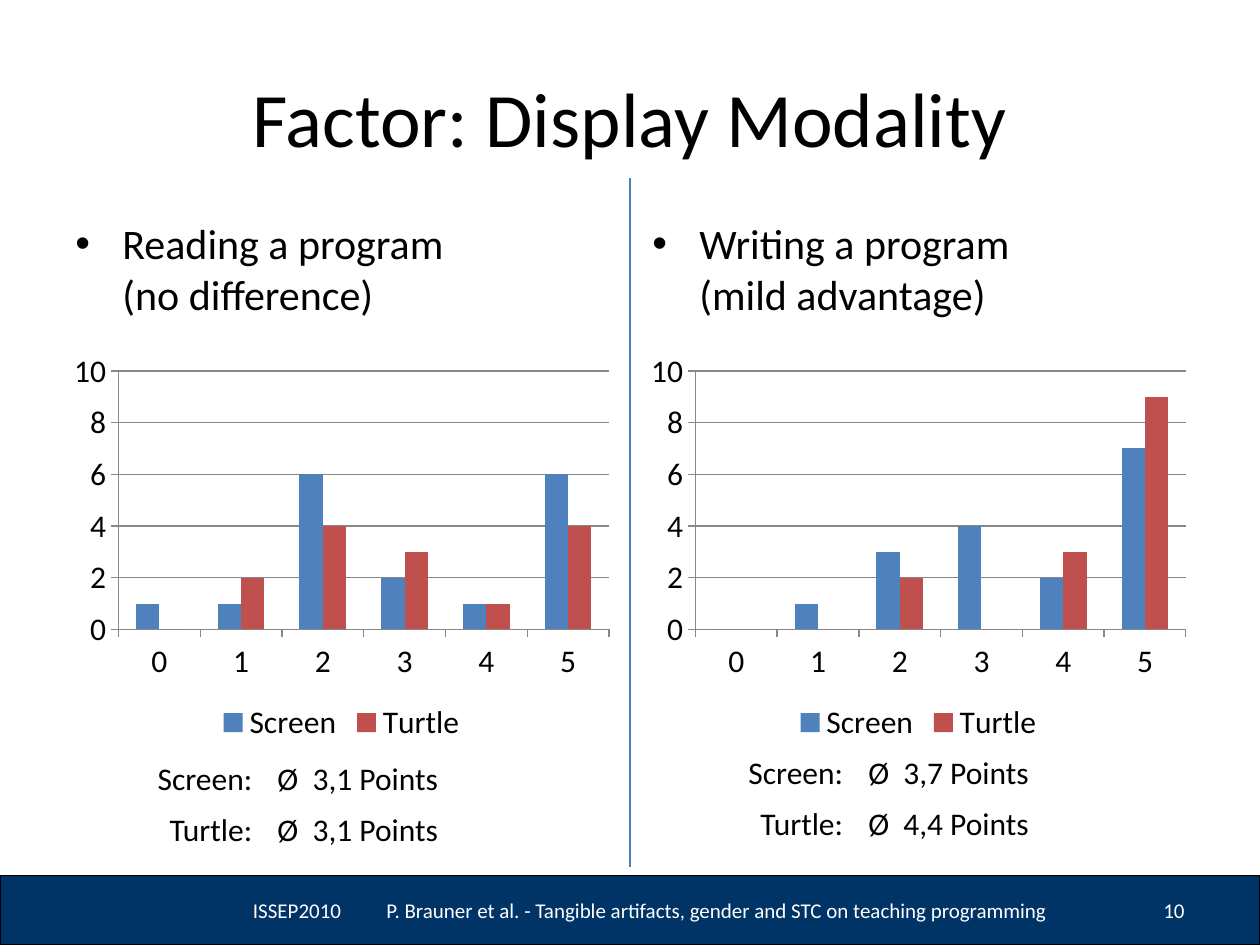
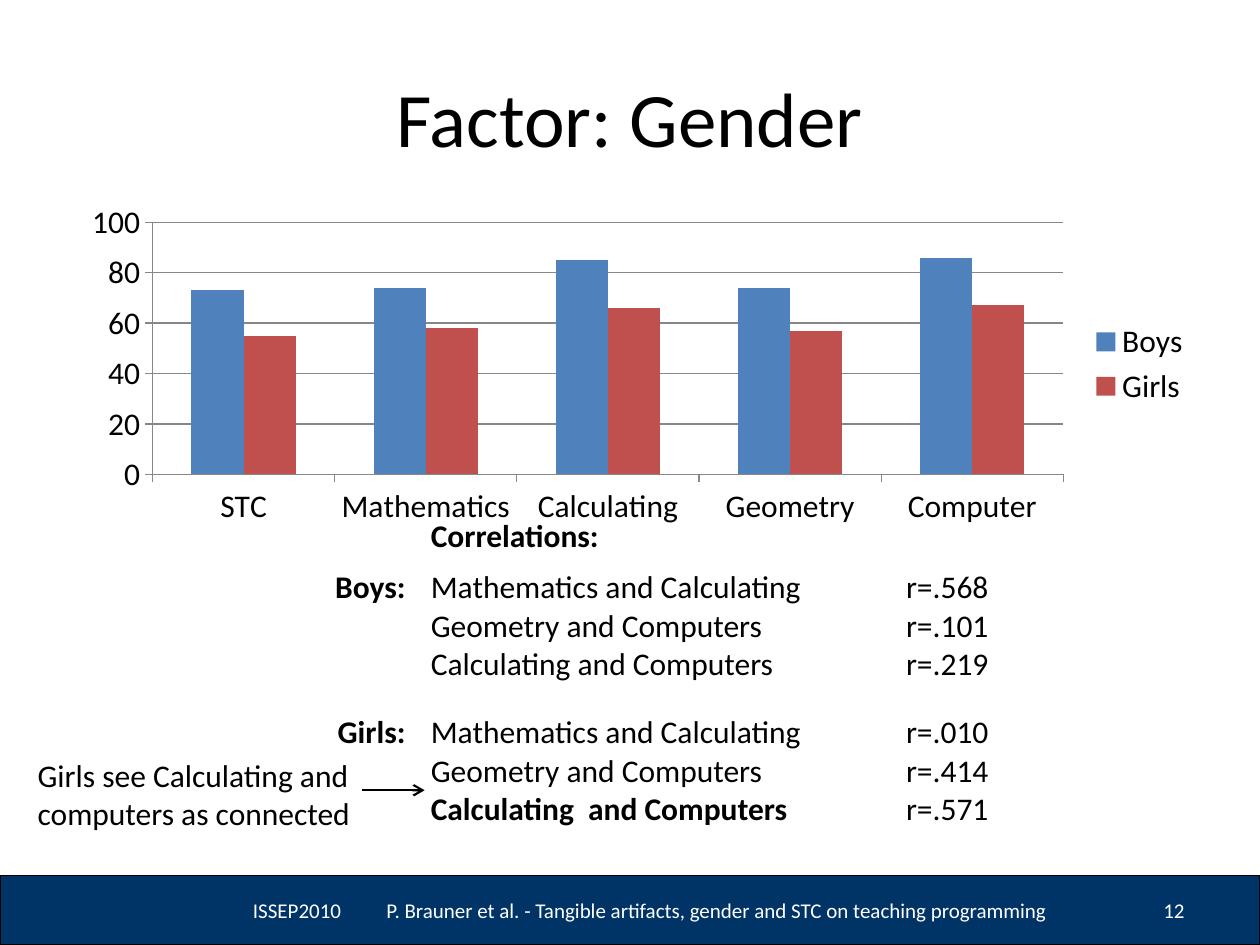
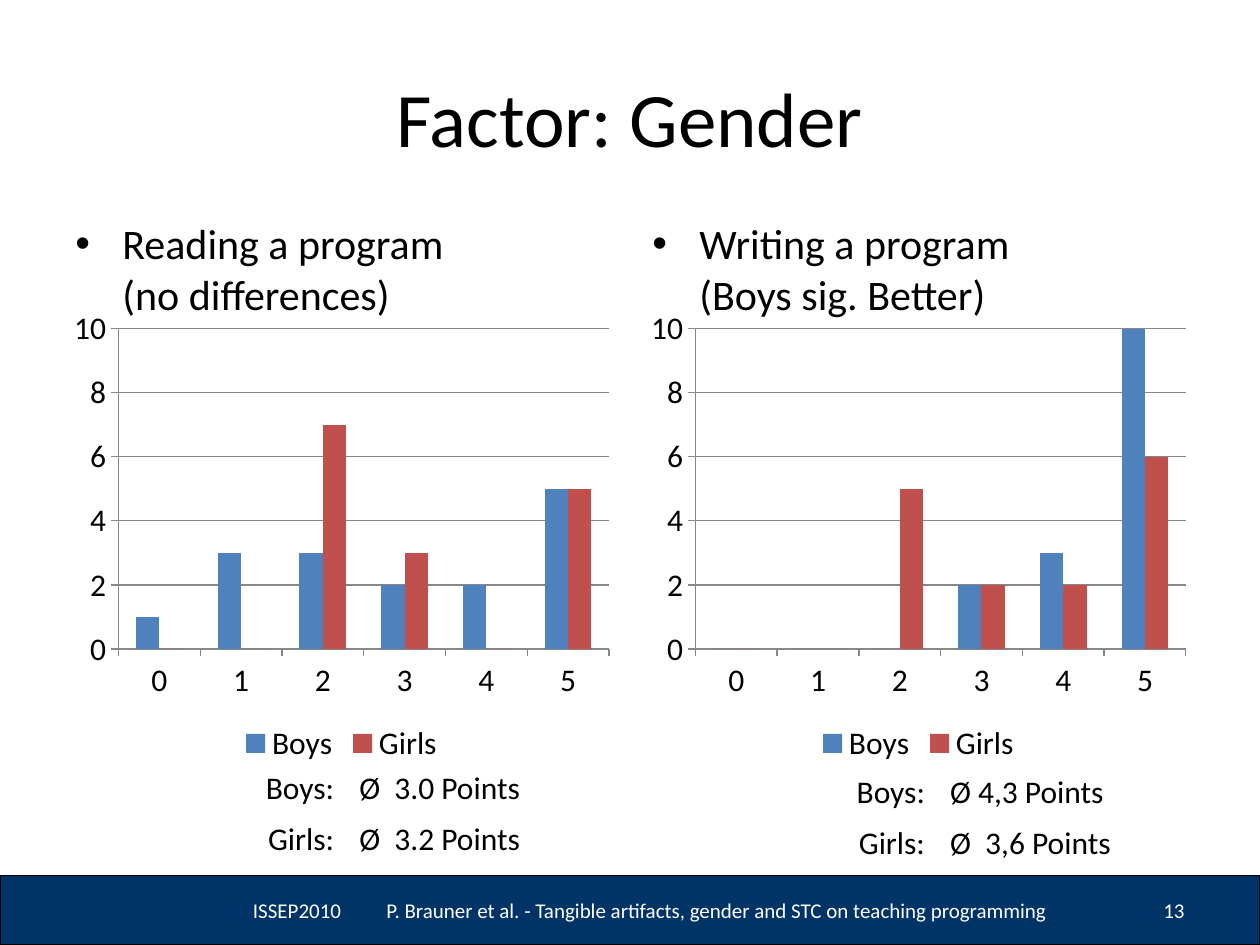
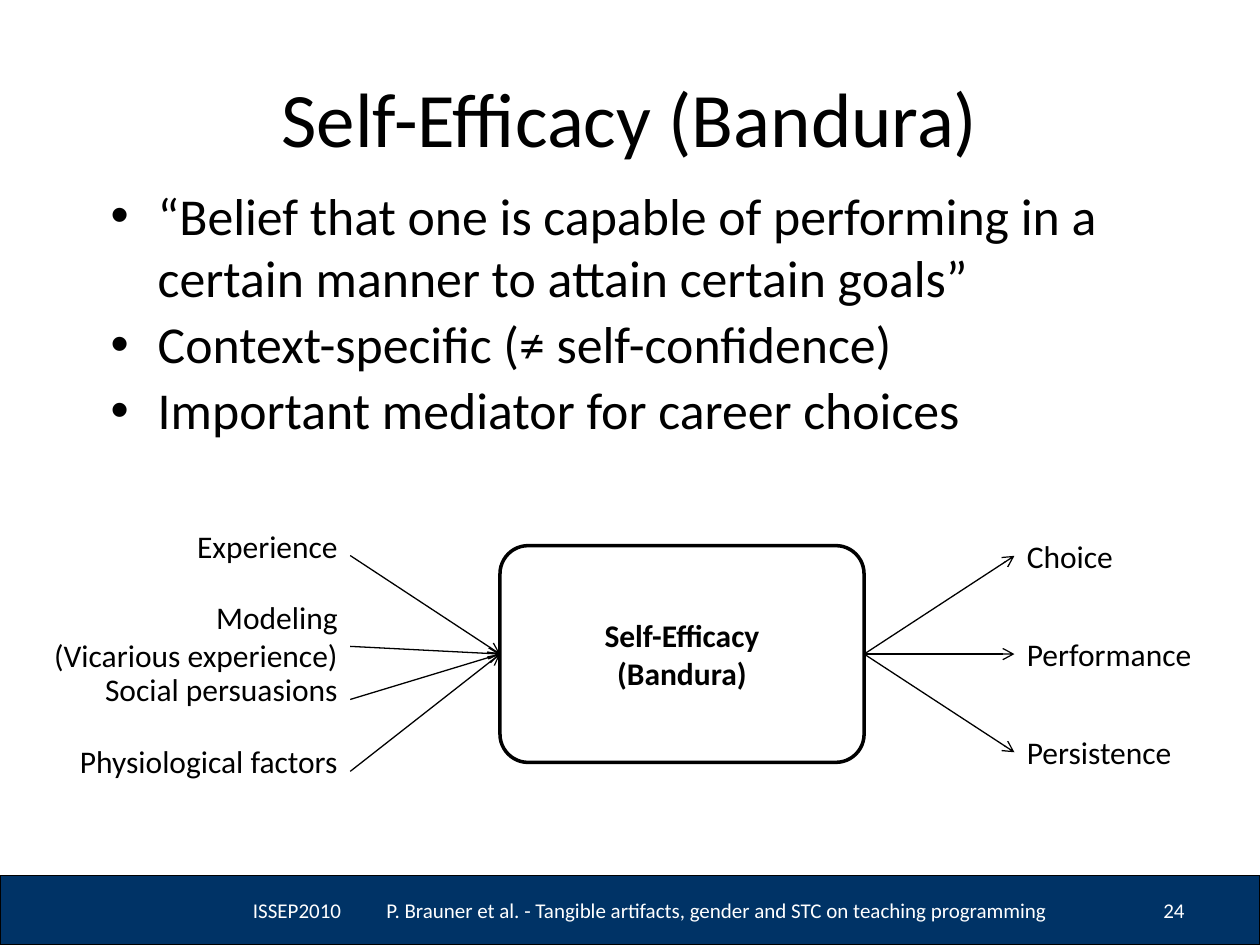
"""Builds four slides on display modality, gender and self-efficacy."""
from lxml import etree
from pptx import Presentation
from pptx import util as u
from pptx.chart import data as chart_data
from pptx.dml import color as dml
from pptx.enum import chart as charts
from pptx.enum import shapes, text
from pptx.oxml import ns

COLORS = {
    "ink": "000000",
    "paper": "FFFFFF",
    "band": "003366",
    "divider": "4B7EBC",
    "axis": "878787",
    "first": "4F81BD",
    "second": "C0504D",
}
FONT = "Calibri"
LEFT, CENTER, RIGHT = text.PP_ALIGN.LEFT, text.PP_ALIGN.CENTER, text.PP_ALIGN.RIGHT
TOP, MIDDLE = text.MSO_ANCHOR.TOP, text.MSO_ANCHOR.MIDDLE
NO_TABLE_STYLE = "{2D5ABB26-0587-4C30-8999-92F81FD0307C}"
FOOTERS = [
    ("ISSEP2010", 4.85, 2.69, LEFT),
    ("P. Brauner et al. - Tangible artifacts, gender and STC on teaching programming",
     7.54, 13.89, LEFT),
]
COLUMN_LEFTS = (1.27, 12.9)
COLUMN_WIDTH = 11.23
ROW_HEIGHT = 1.03
GRADES = ["0", "1", "2", "3", "4", "5"]


def rgb(name):
    """Return the named colour."""
    return dml.RGBColor.from_string(COLORS[name])


def place(*lengths):
    """Turn centimetre numbers into lengths."""
    return [u.Cm(length) for length in lengths]


def style_font(font, size, color="ink", bold=False):
    """Apply the deck's typeface with a size, colour and weight."""
    font.name = FONT
    font.size = u.Pt(size)
    font.bold = bold
    font.color.rgb = rgb(color)


def add_bullet(paragraph):
    """Give a paragraph a hanging bullet."""
    properties = paragraph._p.get_or_add_pPr()
    properties.set("marL", str(u.Cm(0.95)))
    properties.set("indent", str(u.Cm(-0.95)))
    etree.SubElement(properties, ns.qn("a:buFont"), typeface="Arial")
    etree.SubElement(properties, ns.qn("a:buChar"), char="•")


def write(frame, lines, size=18, color="ink", align=LEFT, bold=False, bullet=False):
    """Write one paragraph per line; a leading * marks bold, a newline breaks the line."""
    for index, line in enumerate(lines):
        paragraph = frame.add_paragraph() if index else frame.paragraphs[0]
        paragraph.alignment = align
        if bullet:
            add_bullet(paragraph)
        if bullet and index:
            paragraph.space_before = u.Pt(size * 0.2)
            paragraph.line_spacing = 0.9
        for part_index, part in enumerate(line.removeprefix("*").split("\n")):
            if part_index:
                paragraph.add_line_break()
            span = paragraph.add_run()
            span.text = part
            style_font(span.font, size, color, bold or line.startswith("*"))


def add_text(page, area, lines, anchor=TOP, wrap=True, **style):
    """Add a text box."""
    box = page.shapes.add_textbox(*place(*area))
    frame = box.text_frame
    frame.word_wrap = wrap
    frame.vertical_anchor = anchor
    if not wrap:
        frame.auto_size = text.MSO_AUTO_SIZE.SHAPE_TO_FIT_TEXT
    write(frame, lines, **style)


def add_block(page, kind, area, fill, line_width):
    """Add a filled preset shape with a black outline."""
    block = page.shapes.add_shape(kind, *place(*area))
    block.shadow.inherit = False
    block.fill.solid()
    block.fill.fore_color.rgb = rgb(fill)
    block.line.color.rgb = rgb("ink")
    block.line.width = u.Pt(line_width)
    return block


def add_line(page, start, end, color="ink", width=0.75, arrow=True):
    """Add a straight line, with an open arrowhead at its end if wanted."""
    connector = page.shapes.add_connector(
        shapes.MSO_CONNECTOR.STRAIGHT, *place(*start, *end))
    connector.line.color.rgb = rgb(color)
    connector.line.width = u.Pt(width)
    properties = connector._element.spPr
    if arrow:
        etree.SubElement(properties.find(ns.qn("a:ln")), ns.qn("a:tailEnd"), type="arrow")
    etree.SubElement(properties, ns.qn("a:effectLst"))


def add_columns(page, area, categories, series, top_value, legend_position):
    """Add a clustered column chart."""
    values = chart_data.CategoryChartData()
    values.categories = categories
    for name, numbers in series.items():
        values.add_series(name, numbers)
    chart = page.shapes.add_chart(
        charts.XL_CHART_TYPE.COLUMN_CLUSTERED, *place(*area), values).chart
    style_font(chart.font, 18)
    chart.has_title = False
    chart.has_legend = True
    chart.legend.position = legend_position
    chart.legend.include_in_layout = False
    plot = chart.plots[0]
    plot.vary_by_categories = False
    plot.gap_width = 150
    plot.overlap = 0
    for bars, color in zip(plot.series, ("first", "second")):
        bars.format.fill.solid()
        bars.format.fill.fore_color.rgb = rgb(color)
    scale = chart.value_axis
    scale.minimum_scale, scale.maximum_scale = 0, top_value
    scale.major_unit = top_value / 5
    scale.has_major_gridlines = True
    for axis in (chart.category_axis, scale):
        axis.major_tick_mark = charts.XL_TICK_MARK.OUTSIDE
        axis.minor_tick_mark = charts.XL_TICK_MARK.NONE
    for part in (chart.category_axis, scale, scale.major_gridlines):
        part.format.line.color.rgb = rgb("axis")
        part.format.line.width = u.Pt(0.75)


def add_grid(page, left, top, widths, rows):
    """Add a plain table whose first column is right-aligned."""
    heights = [ROW_HEIGHT + 0.945 * (max(map(len, row)) - 1) for row in rows]
    holder = page.shapes.add_table(
        len(rows), len(widths), *place(left, top, sum(widths), sum(heights)))
    table = holder.table
    table.first_row = table.horz_banding = False
    holder._element.find(".//" + ns.qn("a:tableStyleId")).text = NO_TABLE_STYLE
    for column, width in zip(table.columns, widths):
        column.width = u.Cm(width)
    for row_index, (row, height) in enumerate(zip(rows, heights)):
        table.rows[row_index].height = u.Cm(height)
        for column_index, lines in enumerate(row):
            cell = table.cell(row_index, column_index)
            cell.fill.background()
            write(cell.text_frame, lines, align=LEFT if column_index else RIGHT)


def add_page(deck, title, number):
    """Add a slide with the shared title, band and footers."""
    page = deck.slides.add_slide(deck.slide_layouts[6])
    add_block(page, shapes.MSO_SHAPE.RECTANGLE, (0, 17.65, 25.4, 1.4), "band", 0)
    add_text(page, (1.27, 0.76, 22.86, 3.18), [title], MIDDLE, size=44, align=CENTER)
    for words, left, width, align in FOOTERS + [(number, 21.44, 2.69, RIGHT)]:
        add_text(page, (left, 17.83, width, 1.02), [words], MIDDLE,
                 size=12, color="paper", align=align)
    return page


def add_comparison(page, left, heading, heading_height, chart_span, series):
    """Add a bulleted heading above a chart of points, in one column."""
    add_text(page, (left, 4.27, COLUMN_WIDTH, heading_height), [heading],
             size=24, bullet=True)
    top, height = chart_span
    add_columns(page, (left, top, COLUMN_WIDTH, height), GRADES, series, 10,
                charts.XL_LEGEND_POSITION.BOTTOM)


def add_modality(deck):
    """Add the slide on display modality."""
    page = add_page(deck, "Factor: Display Modality", "10")
    headings = ("Reading a program\n(no difference)", "Writing a program\n(mild advantage)")
    points = (
        {"Screen": [1, 1, 6, 2, 1, 6], "Turtle": [0, 2, 4, 3, 1, 4]},
        {"Screen": [0, 1, 3, 4, 2, 7], "Turtle": [0, 0, 2, 0, 3, 9]},
    )
    for left, heading, series in zip(COLUMN_LEFTS, headings, points):
        add_comparison(page, left, heading, 1.78, (6.93, 8.15), series)
    means = ((2.77, 15.21, "3,1", "3,1"), (14.68, 15.09, "3,7", "4,4"))
    for left, top, screen, turtle in means:
        add_grid(page, left, top, (2.57, 4.11), [
            [["Screen:"], [f"Ø  {screen} Points"]],
            [["Turtle:"], [f"Ø  {turtle} Points"]],
        ])
    add_line(page, (12.7, 3.58), (12.7, 17.48), "divider", arrow=False)


def add_correlations(deck):
    """Add the slide on gender and its correlations."""
    page = add_page(deck, "Factor: Gender", "12")
    add_columns(
        page, (1.4, 3.96, 22.86, 6.76),
        ["STC", "Mathematics", "Calculating", "Geometry", "Computer"],
        {"Boys": [73, 74, 85, 74, 86], "Girls": [55, 58, 66, 57, 67]},
        100, charts.XL_LEGEND_POSITION.RIGHT)
    pairs = ["Mathematics and Calculating", "Geometry and Computers"]
    add_grid(page, 2.49, 10.31, (5.94, 9.58, 5.69), [
        [[], ["*Correlations:"], []],
        [["*Boys:"], pairs + ["Calculating and Computers"], ["r=.568", "r=.101", "r=.219"]],
        [["*Girls:"], pairs + ["*Calculating  and Computers"], ["r=.010", "r=.414", "r=.571"]],
    ])
    add_line(page, (7.29, 15.93), (8.56, 15.93), width=1.25)
    add_text(page, (0.51, 15.11, 6.88, 1.8),
             ["Girls see Calculating and", "computers as connected"], wrap=False)


def add_gender(deck):
    """Add the slide on gender and programming points."""
    page = add_page(deck, "Factor: Gender", "13")
    headings = ("Reading a program\n(no differences)", "Writing a program\n(Boys sig. Better)")
    points = (
        {"Boys": [1, 3, 3, 2, 2, 5], "Girls": [0, 0, 7, 3, 0, 5]},
        {"Boys": [0, 0, 0, 2, 3, 10], "Girls": [0, 0, 5, 2, 2, 6]},
    )
    for left, heading, series in zip(COLUMN_LEFTS, headings, points):
        add_comparison(page, left, heading, 3.25, (6.05, 9.45), series)
    means = (
        (2.77, 15.39, 4.29, "Ø  3.0 Points", "Ø  3.2 Points"),
        (14.68, 15.47, 4.09, "Ø 4,3 Points", "Ø  3,6 Points"),
    )
    for left, top, width, boys, girls in means:
        add_grid(page, left, top, (4.22, width),
                 [[["Boys:"], [boys]], [["Girls:"], [girls]]])


def add_efficacy(deck):
    """Add the slide on self-efficacy, its sources and its effects."""
    page = add_page(deck, "Self-Efficacy (Bandura)", "24")
    add_text(page, (1.98, 3.58, 22.86, 5.77), [
        "“Belief that one is capable of performing in a certain manner to attain certain goals”",
        "Context-specific (≠ self-confidence)",
        "Important mediator for career choices",
    ], size=29.6, bullet=True)
    left, top, width, height = 10.08, 11, 7.34, 4.37
    center = top + height / 2
    core = add_block(page, shapes.MSO_SHAPE.ROUNDED_RECTANGLE,
                     (left, top, width, height), "paper", 2)
    core.adjustments[0] = 0.13
    core.text_frame.vertical_anchor = MIDDLE
    write(core.text_frame, ["Self-Efficacy", "(Bandura)"], align=CENTER, bold=True)

    effects_left = 20.45
    for index, (label, label_width) in enumerate(
            [("Choice", 2.26), ("Performance", 3.86), ("Persistence", 3.45)]):
        level = center + 1.98 * (index - 1)
        add_line(page, (left + width, center), (effects_left, level))
        add_text(page, (effects_left, level - 0.51, label_width, 1.02), [label],
                 MIDDLE, wrap=False)

    sources_right = 7.06
    sources = [
        ("Experience", 3.38, 1.03, 0.71),
        ("Modeling\n(Vicarious experience)", 6.43, 1.8, 1.09),
        ("Social persuasions", 5.26, 1.03, 0.71),
        ("Physiological factors", 5.77, 1.03, 0.71),
    ]
    for index, (label, label_width, label_height, drop) in enumerate(sources):
        label_top = 10.49 + 1.45 * index
        add_line(page, (sources_right, label_top + drop), (left, center))
        add_text(page, (sources_right - label_width, label_top, label_width, label_height),
                 [label], wrap=False, align=RIGHT)


def main():
    """Build and save the deck."""
    deck = Presentation()
    deck.slide_width, deck.slide_height = place(25.4, 19.05)
    for add_topic in (add_modality, add_correlations, add_gender, add_efficacy):
        add_topic(deck)
    deck.save("out.pptx")


if __name__ == "__main__":
    main()
